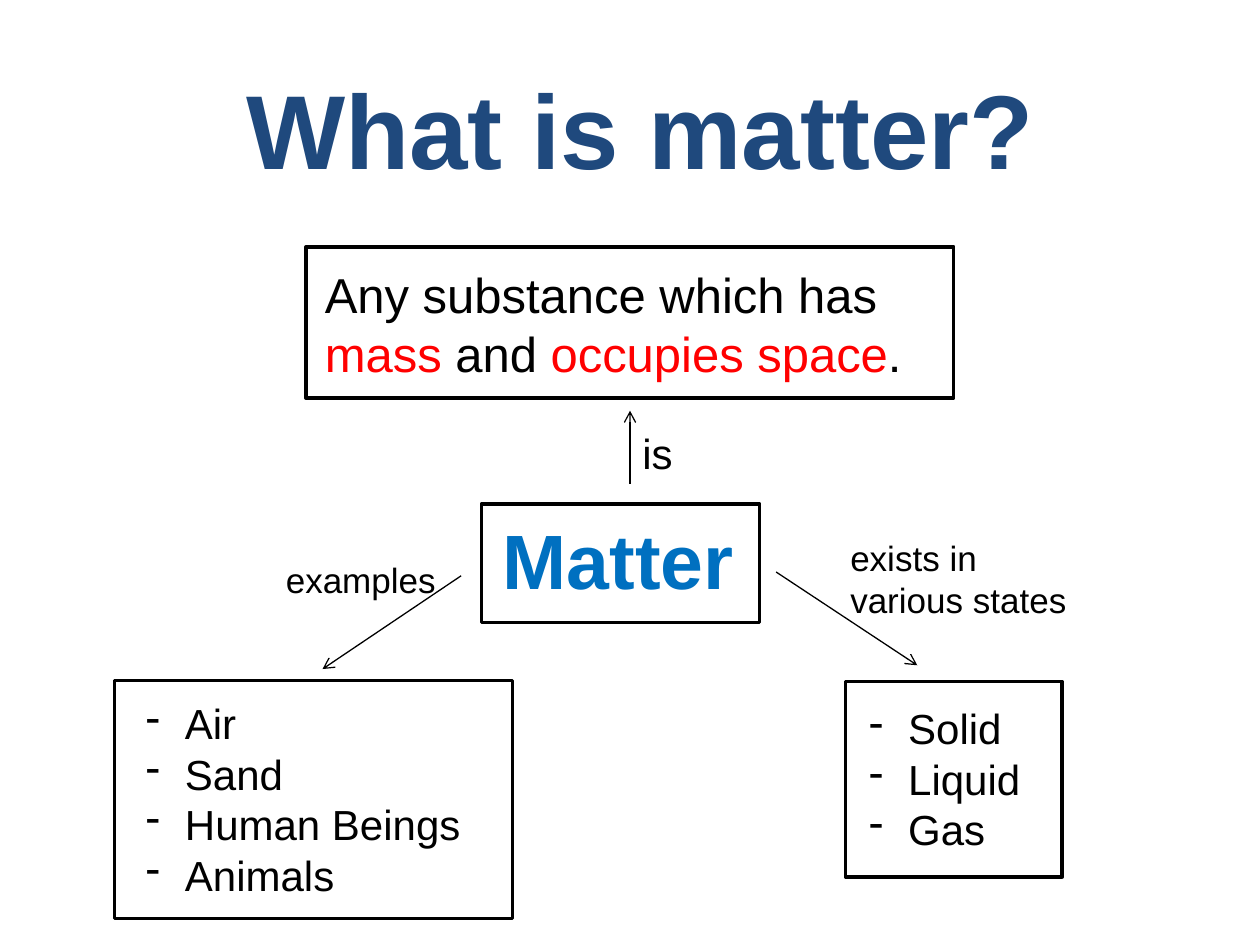
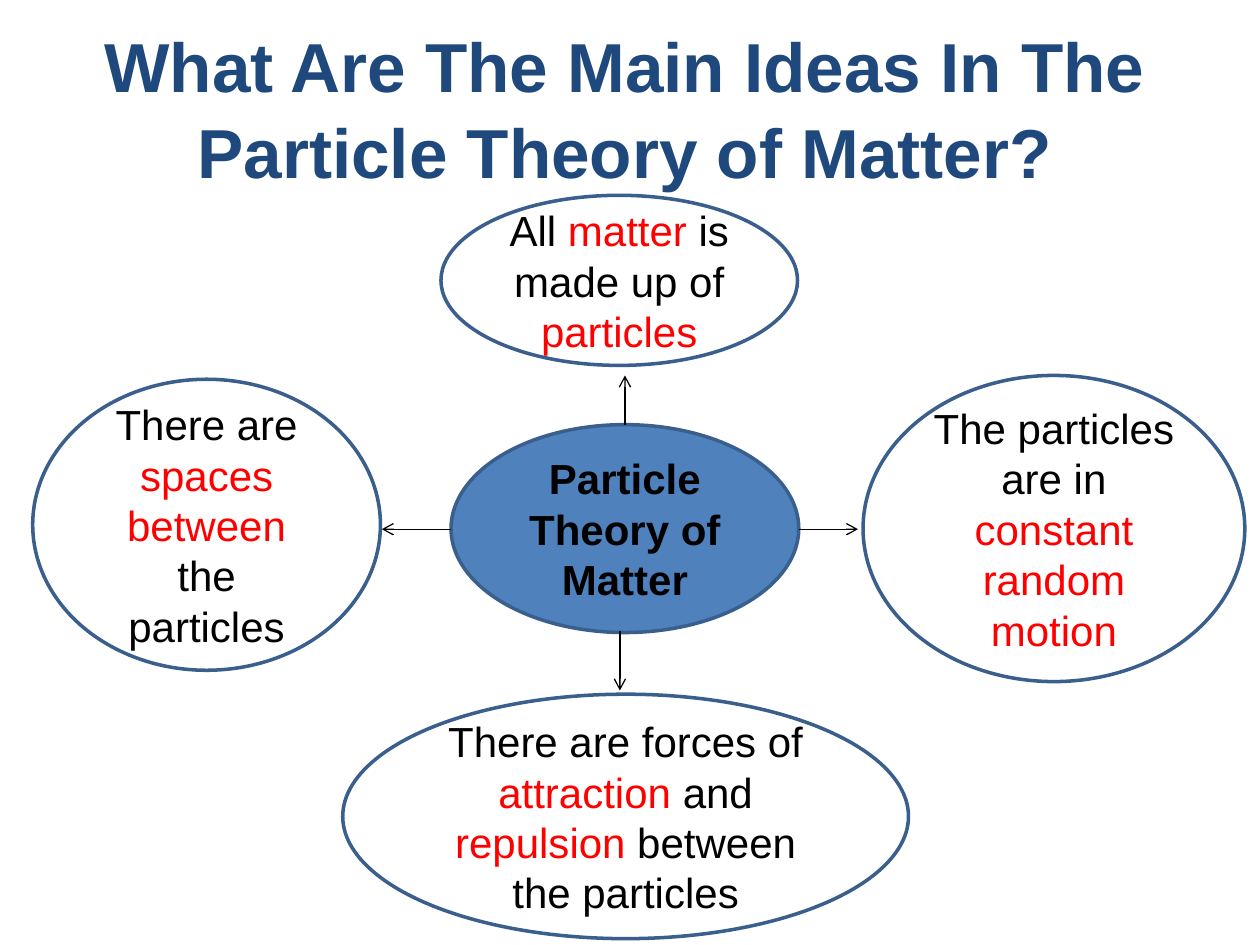
"""Builds two concept-map slides about matter and the particle theory."""
from lxml import etree
from pptx import Presentation
from pptx.dml.color import RGBColor
from pptx.enum.shapes import MSO_CONNECTOR, MSO_SHAPE
from pptx.enum.text import MSO_ANCHOR, PP_ALIGN
from pptx.oxml.ns import qn
from pptx.util import Inches, Pt

FONT = "Arial"
BLACK, WHITE, RED = "000000", "FFFFFF", "FF0000"
NAVY, SKY, BLUE, RIM = "1F497D", "0070C0", "4F81BD", "3A5F8C"

TITLES = [
    ("What is matter?", (0.83, 0.21, 8.5, 1.61), 60, 1),
    ("What Are The Main Ideas In The Particle Theory of Matter?",
     (0.71, 0.13, 8.5, 1.42), 39.6, 1.04),
]

# Text between asterisks is highlighted in red.
FRAMED = [
    ((3.82, 4, 2.21, 0.94), (3.89, 4.02, 2.05, 0.84), ["Matter"],
     dict(size=44, color=SKY, bold=True)),
    ((2.43, 1.96, 5.14, 1.2), (2.48, 2.05, 5.59, 1.04),
     ["Any substance which has *mass* and *occupies space*."], dict(size=28)),
    ((0.91, 5.4, 3.16, 1.89), (1.06, 5.49, 2.76, 1.72),
     ["Air", "Sand", "Human Beings", "Animals"], dict(bullet="-")),
    ((6.71, 5.41, 1.72, 1.55), (6.8, 5.53, 1.53, 1.31),
     ["Solid", "Liquid", "Gas"], dict(bullet="-")),
]
LINKS = [
    ((5, 3.84), (5, 3.26), "is", (5, 3.34, 0.55, 0.5), 24),
    ((3.66, 4.57), (2.56, 5.31), "examples", (2.17, 4.38, 1.5, 0.44), 20),
    ((6.16, 4.54), (7.28, 5.28), "exists in various states",
     (6.65, 4.21, 2.07, 0.77), 20),
]

CORE = ("Particle Theory of Matter", (3.58, 3.37, 2.76, 1.65))
IDEAS = [
    ("All *matter* is made up of *particles*",
     (3.5, 1.55, 2.83, 1.35), (4.96, 3.37), (4.96, 2.98)),
    ("The particles are in *constant random motion*",
     (6.85, 2.98, 3.03, 2.43), (6.34, 4.2), (6.81, 4.2)),
    ("There are *spaces between* the particles",
     (0.26, 3.01, 2.76, 2.31), (3.58, 4.2), (3.03, 4.2)),
    ("There are forces of *attraction* and *repulsion* between the particles",
     (2.72, 5.51, 4.49, 1.94), (4.92, 5.01), (4.92, 5.48)),
]


def rgb(value):
    return RGBColor.from_string(value)


def write(sp, lines, size=24, color=BLACK, bold=False, align=PP_ALIGN.LEFT,
          anchor=MSO_ANCHOR.TOP, bullet=None, spacing=None):
    tf = sp.text_frame
    tf.word_wrap = True
    tf.vertical_anchor = anchor
    for i, line in enumerate(lines):
        p = tf.add_paragraph() if i else tf.paragraphs[0]
        p.alignment = align
        if spacing:
            p.line_spacing = spacing
        if bullet:
            pPr = p._p.get_or_add_pPr()
            pPr.set("marL", str(Inches(0.31)))
            pPr.set("indent", str(-Inches(0.31)))
            etree.SubElement(pPr, qn("a:buChar")).set("char", bullet)
        for j, part in enumerate(line.split("*")):
            if part:
                r = p.add_run()
                r.text = part
                r.font.name, r.font.size, r.font.bold = FONT, Pt(size), bold
                r.font.color.rgb = rgb(RED if j % 2 else color)


def add_text(s, box, lines, **fmt):
    write(s.shapes.add_textbox(*map(Inches, box)), lines, **fmt)


def add_outlined(s, kind, box, fill=WHITE, line=BLACK):
    sp = s.shapes.add_shape(kind, *map(Inches, box))
    sp.shadow.inherit = False
    sp.fill.solid()
    sp.fill.fore_color.rgb = rgb(fill)
    sp.line.color.rgb = rgb(line)
    sp.line.width = Pt(2)
    return sp


def add_bubble(s, text, box, fill=WHITE, bold=False):
    sp = add_outlined(s, MSO_SHAPE.OVAL, box, fill, RIM)
    write(sp, [text], bold=bold, align=PP_ALIGN.CENTER, anchor=MSO_ANCHOR.MIDDLE)


def add_arrow(s, start, end):
    cn = s.shapes.add_connector(MSO_CONNECTOR.STRAIGHT, *map(Inches, start + end))
    cn.line.color.rgb = rgb(BLACK)
    cn.line.width = Pt(0.75)
    etree.SubElement(cn.line._get_or_add_ln(), qn("a:tailEnd")).set("type", "arrow")
    etree.SubElement(cn._element.spPr, qn("a:effectLst"))


def add_slide(prs, title, box, size, spacing):
    s = prs.slides.add_slide(prs.slide_layouts[6])
    add_text(s, box, [title], size=size, color=NAVY, bold=True, spacing=spacing,
             align=PP_ALIGN.CENTER, anchor=MSO_ANCHOR.MIDDLE)
    return s


def main():
    prs = Presentation()
    prs.slide_width, prs.slide_height = Inches(10), Inches(7.5)
    matter, theory = [add_slide(prs, *title) for title in TITLES]

    for frame, box, lines, fmt in FRAMED:
        add_outlined(matter, MSO_SHAPE.RECTANGLE, frame)
        add_text(matter, box, lines, **fmt)
    for start, end, label, box, size in LINKS:
        add_arrow(matter, start, end)
        add_text(matter, box, [label], size=size)

    add_bubble(theory, *CORE, fill=BLUE, bold=True)
    for text, box, start, end in IDEAS:
        add_arrow(theory, start, end)
        add_bubble(theory, text, box)

    prs.save("out.pptx")


if __name__ == "__main__":
    main()
